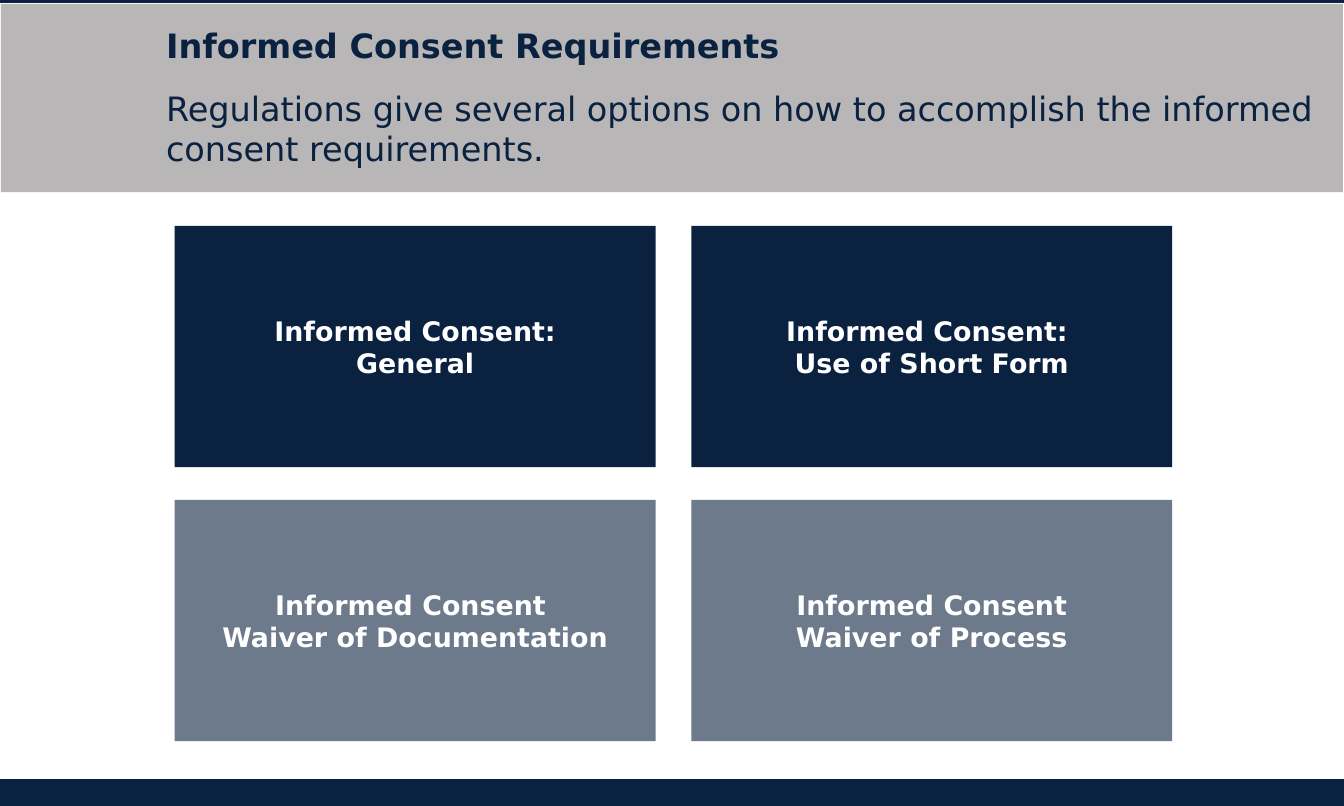
import pptx
import pptx.util
import pptx.dml.color
import pptx.enum.shapes
import pptx.enum.text
import pptx.oxml.ns
from lxml import etree

# Content
HEADING = "Informed Consent Requirements"
SUMMARY = ("Regulations give several options on how to accomplish "
           "the informed consent requirements.")
CARD_ROWS = [
    [("Informed Consent:", "General"),
     ("Informed Consent: ", "Use of Short Form")],
    [("Informed Consent ", "Waiver of Documentation"),
     ("Informed Consent", "Waiver of Process")],
]
ROW_OPACITY = [100, 60]

# Style and grid, in inches
FONT = "DejaVu Sans"
NAVY, GRAY, WHITE = "0A2240", "B8B6B7", "FFFFFF"
WIDTH, HEIGHT = 13.92, 8.35
TEXT_LEFT, TEXT_WIDTH = 1.72, 12.19
CARD_LEFT, CARD_TOP = 1.81, 2.34
CARD_WIDTH, CARD_HEIGHT = 4.98, 2.5
COLUMN_GAP, ROW_GAP = 0.37, 0.34


def color(value):
    return pptx.dml.color.RGBColor.from_string(value)


def box(*lengths):
    return [pptx.util.Inches(length) for length in lengths]


def add_rectangle(bounds, fill, line=None, opacity=100):
    shape = slide.shapes.add_shape(
        pptx.enum.shapes.MSO_SHAPE.RECTANGLE, *box(*bounds))
    shape.shadow.inherit = False
    shape.fill.solid()
    shape.fill.fore_color.rgb = color(fill)
    if line:
        shape.line.color.rgb = color(line)
        shape.line.width = pptx.util.Pt(4.5)
    else:
        shape.line.fill.background()
    if opacity < 100:
        tag = pptx.oxml.ns.qn("a:srgbClr")
        fill_color = next(shape.element.spPr.iter(tag))
        etree.SubElement(fill_color, pptx.oxml.ns.qn("a:alpha"),
                         val=str(opacity * 1000))
    return shape


def write(shape, lines, size, text_color, bold, align, anchor):
    frame = shape.text_frame
    frame.word_wrap = True
    frame.auto_size = pptx.enum.text.MSO_AUTO_SIZE.NONE
    frame.vertical_anchor = anchor
    frame.text = "\n".join(lines)
    for paragraph in frame.paragraphs:
        paragraph.alignment = align
        paragraph.line_spacing = 1.0
        paragraph.space_before = pptx.util.Pt(0)
        paragraph.font.name = FONT
        paragraph.font.size = pptx.util.Pt(size)
        paragraph.font.bold = bold
        paragraph.font.color.rgb = color(text_color)


def write_header(shape, top, height, text, bold):
    shape.left, shape.top, shape.width, shape.height = box(
        TEXT_LEFT, top, TEXT_WIDTH, height)
    write(shape, [text], 25, NAVY, bold, pptx.enum.text.PP_ALIGN.LEFT,
          pptx.enum.text.MSO_ANCHOR.TOP)
    frame = shape.text_frame
    frame.margin_left = frame.margin_right = 0
    frame.margin_top = frame.margin_bottom = 0


presentation = pptx.Presentation()
presentation.slide_width, presentation.slide_height = box(WIDTH, HEIGHT)
slide = presentation.slides.add_slide(presentation.slide_layouts[5])

# Page frame, footer bar and header band
add_rectangle((-0.03, 0, 14, 8.11), WHITE, NAVY)
add_rectangle((-0.03, 8.1, 14, 0.31), NAVY, NAVY)
add_rectangle((0.01, 0.04, 13.9, 1.95), GRAY)

# Title, brought in front of the band, and summary
title = slide.shapes.title
title.element.getparent().append(title.element)
write_header(title, 0.26, 0.42, HEADING, True)
summary = slide.shapes.add_textbox(*box(0, 0, 1, 1))
write_header(summary, 0.91, 0.85, SUMMARY, False)

# Grid of cards
for row, (cards, opacity) in enumerate(zip(CARD_ROWS, ROW_OPACITY)):
    for column, lines in enumerate(cards):
        left = CARD_LEFT + column * (CARD_WIDTH + COLUMN_GAP)
        top = CARD_TOP + row * (CARD_HEIGHT + ROW_GAP)
        card = add_rectangle((left, top, CARD_WIDTH, CARD_HEIGHT), NAVY,
                             opacity=opacity)
        write(card, lines, 20, WHITE, True, pptx.enum.text.PP_ALIGN.CENTER,
              pptx.enum.text.MSO_ANCHOR.MIDDLE)

presentation.save("out.pptx")
